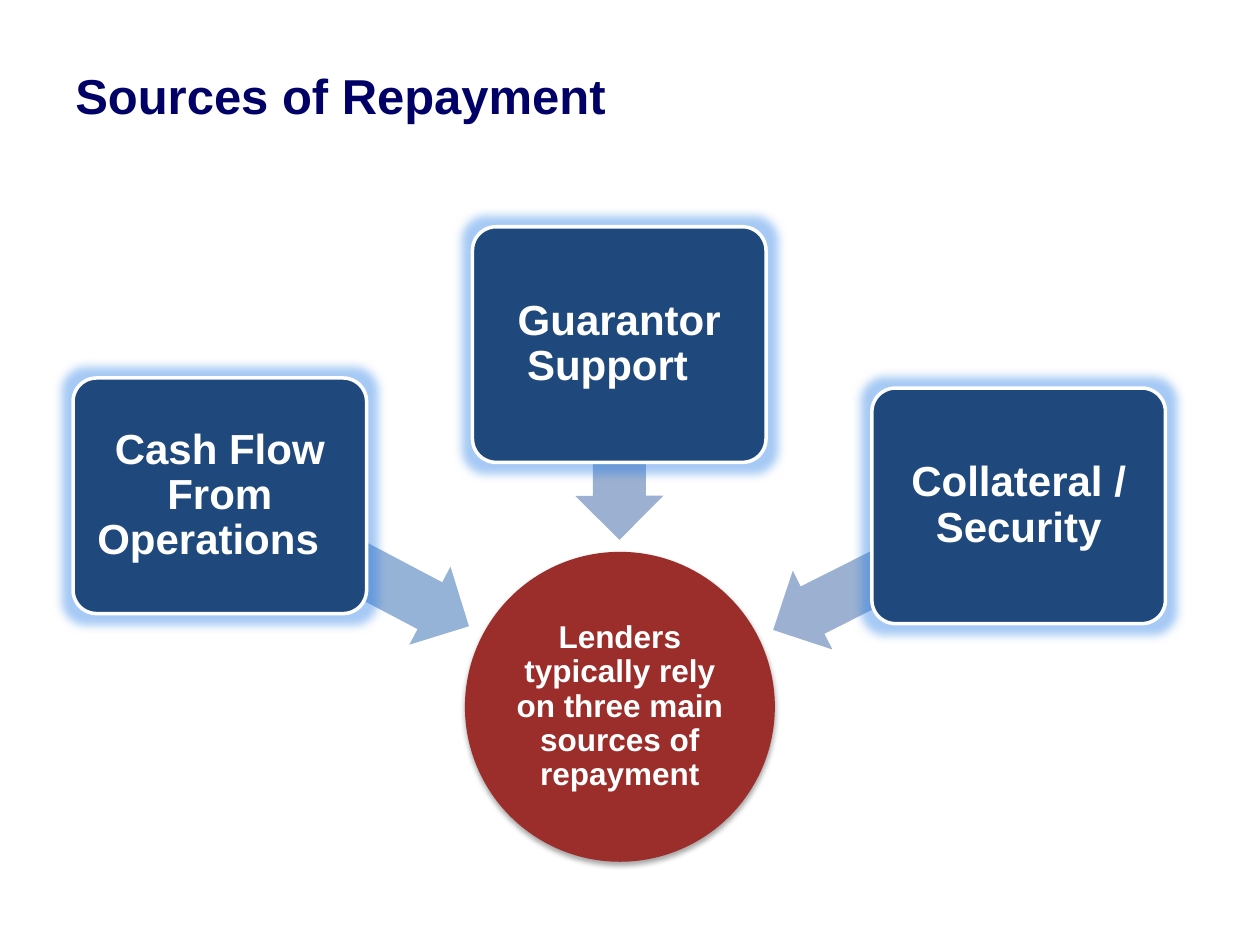
from lxml import etree
from pptx import Presentation
from pptx.dml.color import RGBColor
from pptx.enum.shapes import MSO_SHAPE
from pptx.enum.text import MSO_ANCHOR, PP_ALIGN
from pptx.oxml import parse_xml
from pptx.oxml.ns import nsdecls, qn
from pptx.util import Inches, Pt

ELLIPSE = MSO_SHAPE.OVAL
ARROW = MSO_SHAPE.LEFT_ARROW
ROUNDED = MSO_SHAPE.ROUNDED_RECTANGLE
MIDDLE = MSO_ANCHOR.MIDDLE
CENTER = PP_ALIGN.CENTER

NAVY = RGBColor(0x00, 0x00, 0x66)
RED = RGBColor(0x9B, 0x2D, 0x2A)
BLUE = RGBColor(0x1F, 0x49, 0x7D)
SKY = RGBColor(0x95, 0xB3, 0xD7)
STEEL = RGBColor(0x9C, 0xB1, 0xD1)
WHITE = RGBColor(0xFF, 0xFF, 0xFF)

GLOW = (f'<a:glow {nsdecls("a")} rad="139700"><a:srgbClr val="217AE6">'
        '<a:alpha val="40000"/></a:srgbClr></a:glow>')
SHADOW = (f'<a:outerShdw {nsdecls("a")} blurRad="39400" dist="22900" dir="5400000" '
          'rotWithShape="0"><a:srgbClr val="000000"><a:alpha val="35000"/>'
          '</a:srgbClr></a:outerShdw>')

prs = Presentation()
prs.slide_width, prs.slide_height = Inches(10), Inches(7.5)
slide = prs.slides.add_slide(prs.slide_layouts[6])


def add_figure(kind, left, top, width, height, color, effect=None):
    figure = slide.shapes.add_shape(
        kind, Inches(left), Inches(top), Inches(width), Inches(height))
    figure.fill.solid()
    figure.fill.fore_color.rgb = color
    figure.line.fill.background()
    figure.shadow.inherit = False
    if effect:
        effects = figure._element.spPr.find(qn("a:effectLst"))
        effects.append(parse_xml(effect))
    return figure


def write(figure, text, size, color, inset, align=None):
    frame = figure.text_frame
    frame.word_wrap = True
    frame.vertical_anchor = MIDDLE
    frame.margin_left = frame.margin_right = Inches(inset)
    frame.margin_top = frame.margin_bottom = Inches(inset)
    paragraph = frame.paragraphs[0]
    paragraph.text = text
    paragraph.alignment = align
    paragraph.line_spacing = 0.9 if align else None
    paragraph.font.name = "Arial"
    paragraph.font.size = Pt(size)
    paragraph.font.bold = True
    paragraph.font.color.rgb = color


title = slide.shapes.add_textbox(Inches(0.5), Inches(0.25), Inches(9), Inches(1))
write(title, "Sources of Repayment", 28, NAVY, 0.1)

lenders = add_figure(ELLIPSE, 3.69, 4.38, 2.46, 2.46, RED, SHADOW)
write(lenders, "Lenders typically rely on three main sources of repayment",
      18, WHITE, 0.01, CENTER)

sources = [
    ("Cash Flow From Operations  ", 0.58, 3, 1.62, 4.1, 2.23, 207.8, SKY),
    ("Guarantor Support  ", 3.75, 1.8, 4.14, 3.16, 1.55, 269.9, STEEL),
    ("Collateral / Security", 6.92, 3.08, 6.02, 4.16, 2.18, 333.3, STEEL),
]
for text, left, top, arrow_left, arrow_top, arrow_length, angle, arrow_color in sources:
    arrow = add_figure(ARROW, arrow_left, arrow_top, arrow_length, 0.7, arrow_color)
    arrow.adjustments[0] = 0.6
    arrow.adjustments[1] = 0.5
    arrow.rotation = angle

    source = add_figure(ROUNDED, left, top, 2.33, 1.87, BLUE, GLOW)
    source.adjustments[0] = 0.1
    source.line.color.rgb = WHITE
    source.line.width = Pt(2)
    write(source, text, 24, WHITE, 0.05, CENTER)

prs.save("out.pptx")
